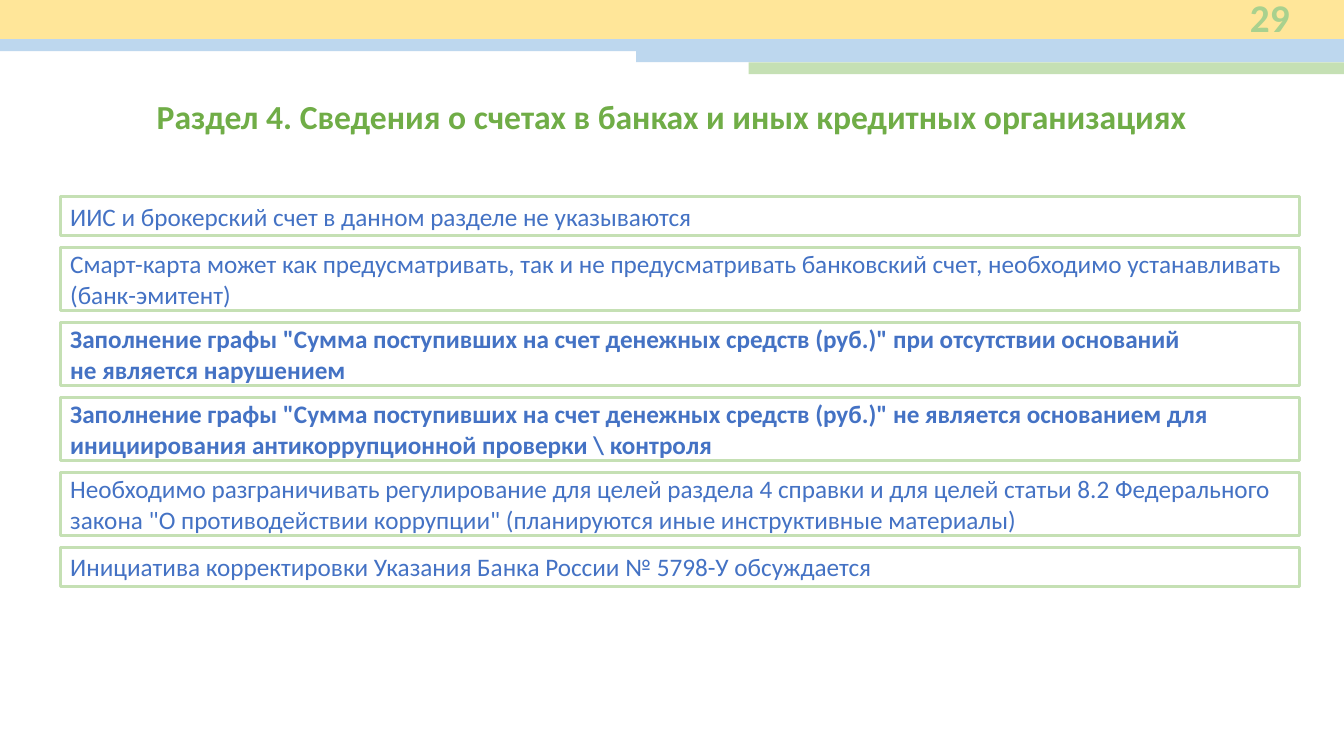
from dataclasses import dataclass

from pptx import Presentation
from pptx.dml.color import RGBColor
from pptx.enum.shapes import MSO_SHAPE
from pptx.enum.text import MSO_ANCHOR, PP_ALIGN
from pptx.util import Cm, Pt


@dataclass(frozen=True)
class Theme:
    font: str = "Calibri"
    yellow: str = "FFE699"
    blue: str = "BDD7EE"
    green: str = "C5E0B4"
    heading: str = "70AD47"
    number: str = "A9D18E"
    body: str = "4472C4"
    heading_size: int = 24
    number_size: int = 28
    body_size: int = 18
    border: float = 2.25


THEME = Theme()
SLIDE_WIDTH = 33.87
LEFT = 1.52
NOTE_WIDTH = 31.22
NOTES_TOP = 4.95
NOTE_GAP = 0.29
NOTE_HEIGHTS = {1: 0.99, 2: 1.6}

BANDS = [
    (0, 0, 0.99, THEME.yellow),
    (0, 0.99, 0.3, THEME.blue),
    (16.03, 1.27, 0.3, THEME.blue),
    (18.87, 1.57, 0.3, THEME.green),
]

NOTES = [
    (1, False, ["ИИС и брокерский счет в данном разделе не указываются"]),
    (2, False, ["Смарт-карта может как предусматривать, так и не предусматривать "
                "банковский счет, необходимо устанавливать (банк-эмитент)"]),
    (2, True, ["Заполнение графы \"Сумма поступивших на счет денежных средств "
               "(руб.)\" при отсутствии оснований ",
               "не является нарушением"]),
    (2, True, ["Заполнение графы \"Сумма поступивших на счет денежных средств "
               "(руб.)\" не является основанием для инициирования "
               "антикоррупционной проверки \\ контроля"]),
    (2, False, ["Необходимо разграничивать регулирование для целей раздела 4 "
                "справки и для целей статьи 8.2 Федерального закона "
                "\"О противодействии коррупции\" (планируются иные "
                "инструктивные материалы)"]),
    (1, False, ["Инициатива корректировки Указания Банка России № 5798-У "
                "обсуждается"]),
]


def write(frame, lines, size, color, bold, align, anchor):
    frame.word_wrap = True
    frame.vertical_anchor = anchor
    paragraph = frame.paragraphs[0]
    paragraph.alignment = align
    for index, line in enumerate(lines):
        if index:
            paragraph.add_line_break()
        run = paragraph.add_run()
        run.text = line
        run.font.name = THEME.font
        run.font.size = Pt(size)
        run.font.bold = bold
        run.font.color.rgb = RGBColor.from_string(color)


def add_rectangle(slide, left, top, width, height):
    rectangle = slide.shapes.add_shape(
        MSO_SHAPE.RECTANGLE, Cm(left), Cm(top), Cm(width), Cm(height))
    rectangle.shadow.inherit = False
    return rectangle


def add_band(slide, left, top, height, color):
    band = add_rectangle(slide, left, top, SLIDE_WIDTH - left, height)
    band.fill.solid()
    band.fill.fore_color.rgb = RGBColor.from_string(color)
    band.line.fill.background()


def add_label(slide, box, text, size, color, align, anchor):
    label = slide.shapes.add_textbox(*map(Cm, box))
    write(label.text_frame, [text], size, color, True, align, anchor)


def add_note(slide, top, height, lines, bold):
    note = add_rectangle(slide, LEFT, top, NOTE_WIDTH, height)
    note.fill.background()
    note.line.color.rgb = RGBColor.from_string(THEME.green)
    note.line.width = Pt(THEME.border)
    write(note.text_frame, lines, THEME.body_size, THEME.body, bold,
          PP_ALIGN.LEFT, MSO_ANCHOR.MIDDLE)


def main():
    presentation = Presentation()
    presentation.slide_width = Cm(SLIDE_WIDTH)
    presentation.slide_height = Cm(19.05)
    slide = presentation.slides.add_slide(presentation.slide_layouts[6])

    for band in BANDS:
        add_band(slide, *band)
    add_label(slide, (LEFT, 2.29, 30.81, 1.27),
              "Раздел 4. Сведения о счетах в банках и иных кредитных организациях",
              THEME.heading_size, THEME.heading, PP_ALIGN.CENTER, MSO_ANCHOR.TOP)
    add_label(slide, (29.57, -0.13, 3.18, 1.12), "29",
              THEME.number_size, THEME.number, PP_ALIGN.RIGHT, MSO_ANCHOR.MIDDLE)

    top = NOTES_TOP
    for line_count, bold, lines in NOTES:
        height = NOTE_HEIGHTS[line_count]
        add_note(slide, top, height, lines, bold)
        top += height + NOTE_GAP

    presentation.save("out.pptx")


if __name__ == "__main__":
    main()
